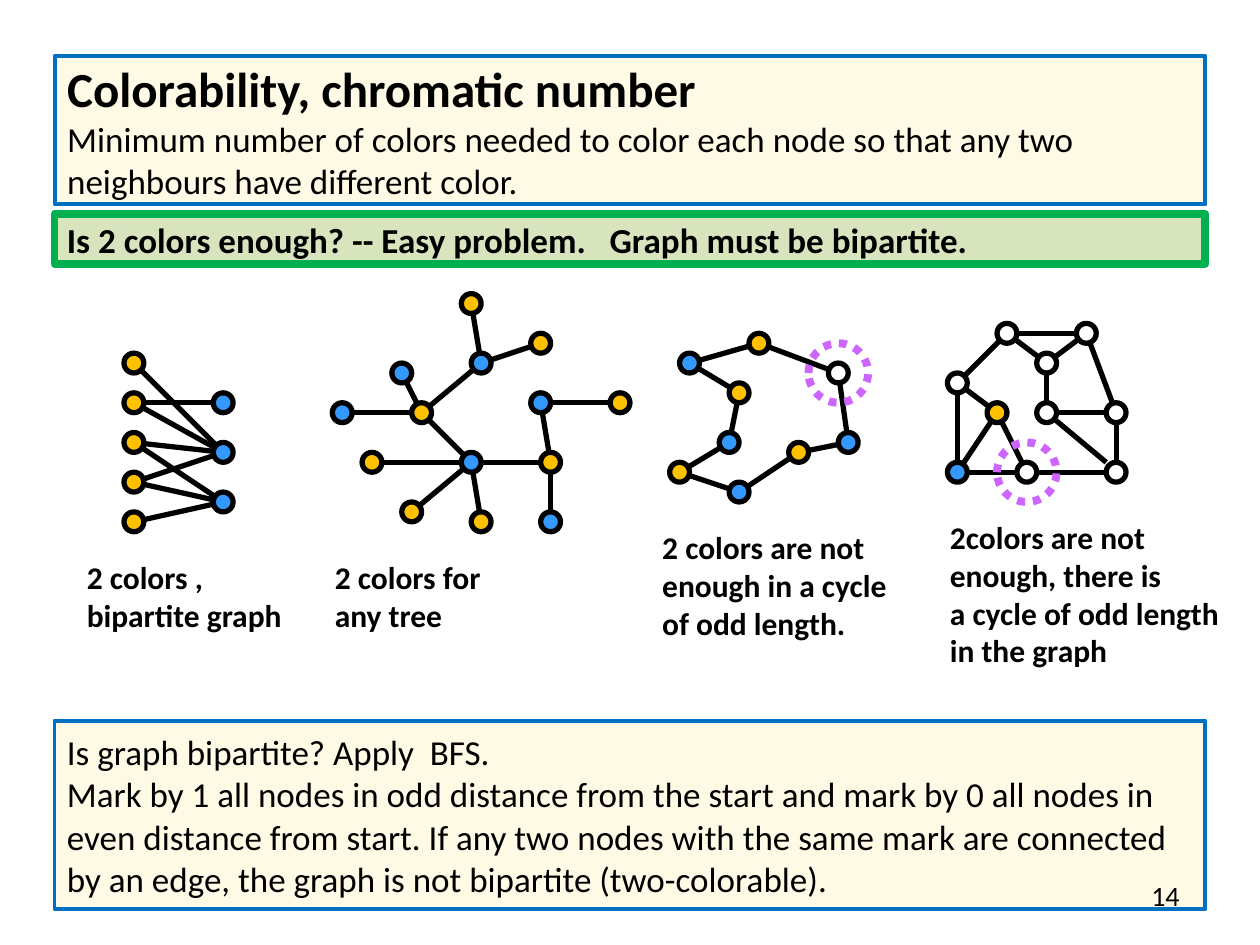
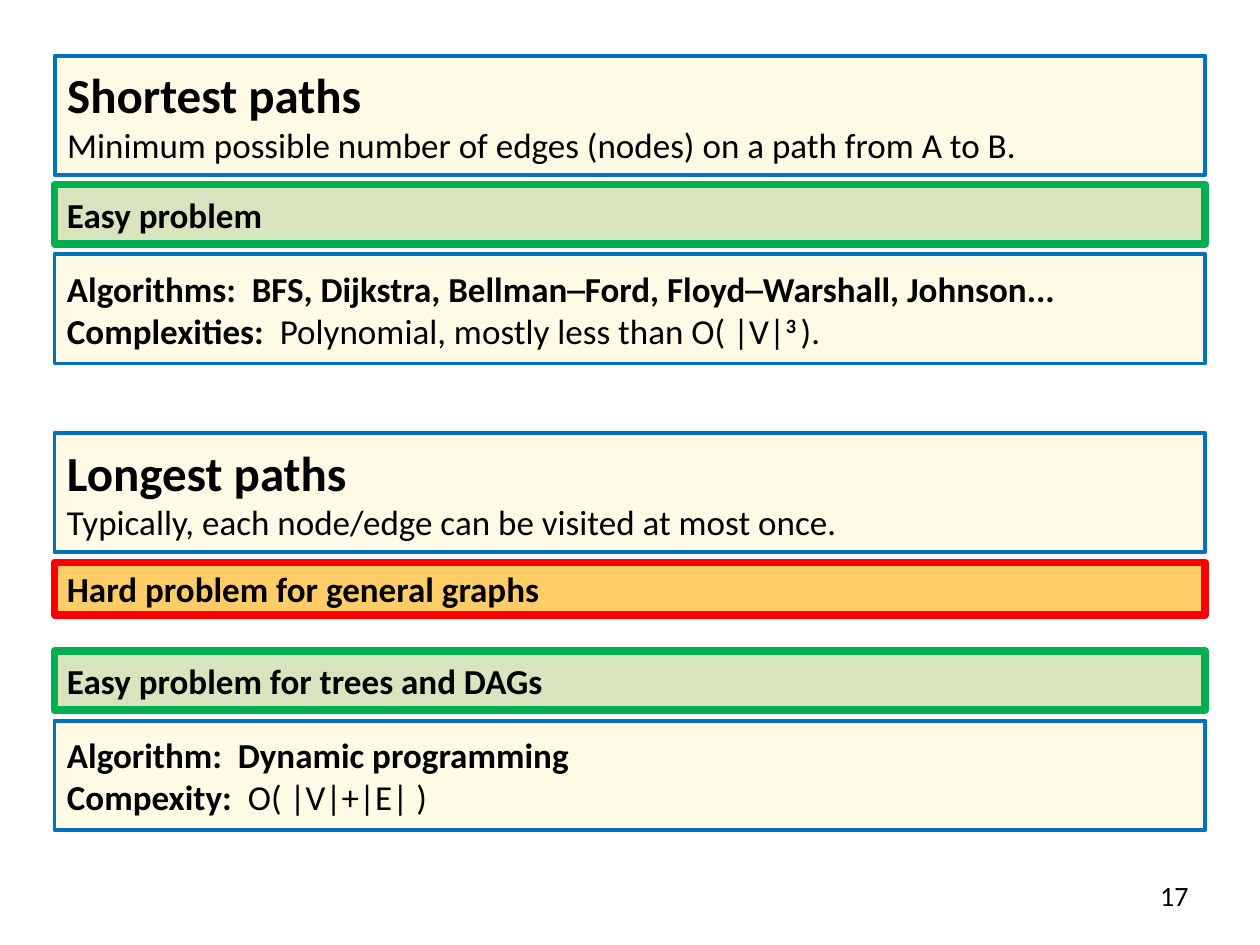
from dataclasses import dataclass

from lxml.etree import SubElement
from pptx import Presentation
from pptx.dml.color import RGBColor
from pptx.enum.dml import MSO_LINE_DASH_STYLE as Dash
from pptx.enum.shapes import MSO_CONNECTOR as Connector, MSO_SHAPE as Preset
from pptx.enum.text import MSO_ANCHOR as Anchor, MSO_AUTO_SIZE as AutoSize, PP_ALIGN as Align
from pptx.oxml.ns import qn
from pptx.shapes.autoshape import Shape
from pptx.slide import Slide
from pptx.util import Cm, Pt

FONT = "Calibri"
BLACK, WHITE, YELLOW, BLUE, VIOLET = "000000", "FFFFFF", "FFC000", "3399FF", "CC66FF"
PANEL_LEFT, PANEL_WIDTH = 1.1, 23.2
GRID, ORIGIN_X, ORIGIN_Y = 0.2, 0.1, 0.12
NODE_SIZE, RING_SIZE = 0.4, 1.2
TITLE_ONLY = 5


@dataclass(frozen=True)
class Run:
    text: str
    size: int = 20
    bold: bool = False
    baseline: int = 0


@dataclass(frozen=True)
class PanelStyle:
    fill: str
    line: str
    width: float


@dataclass(frozen=True)
class Panel:
    style: PanelStyle
    top: float
    height: float
    paragraphs: list[list[Run]]
    is_title: bool = False


@dataclass(frozen=True)
class Node:
    column: int
    row: int
    colour: str = ""

    @property
    def center(self) -> tuple[float, float]:
        return ORIGIN_X + self.column * GRID, ORIGIN_Y + self.row * GRID


@dataclass(frozen=True)
class Graph:
    nodes: dict[str, Node]
    edges: str
    caption: list[str]
    caption_box: tuple[float, float, float, float]
    ringed: str = ""


INFO = PanelStyle("FFFAE5", "0070C0", 2.25)
EASY = PanelStyle("D7E4BD", "00B050", 4.5)
HARD = PanelStyle("FFCC66", "FF0000", 4.5)


def bold(text: str, size: int = 20) -> Run:
    return Run(text, size, True)


def heading(title: str, text: str) -> list[list[Run]]:
    return [[bold(title, 28)], [Run(text)]]


COLORABILITY_PANELS = [
    Panel(INFO, 1.12, 3, heading(
        "Colorability, chromatic number",
        "Minimum number of colors needed to color each node so that any two "
        "neighbours have different color."), True),
    Panel(EASY, 4.32, 1, [[bold("Is 2 colors enough? -- Easy problem.   Graph must be bipartite.")]]),
    Panel(INFO, 14.53, 3.8, [
        [Run("Is graph bipartite? Apply  BFS.")],
        [Run("Mark by 1 all nodes in odd distance from the start and mark by 0 all nodes in "
             "even distance from start. If any two nodes with the same mark are connected "
             "by an edge, the graph is not bipartite (two-colorable).")]]),
]

PATH_PANELS = [
    Panel(INFO, 1.12, 2.4, heading(
        "Shortest paths", "Minimum possible number of edges (nodes) on a path from A to B."), True),
    Panel(EASY, 3.72, 1.2, [[bold("Easy problem")]]),
    Panel(INFO, 5.13, 2.2, [
        [bold("Algorithms:  BFS, Dijkstra, Bellman─Ford, Floyd─Warshall, Johnson...")],
        [bold("Complexities:  "), Run("Polynomial, mostly less than O( |V|"),
         Run("3 ", bold=True, baseline=30000), Run(").")]]),
    Panel(INFO, 8.73, 2.4, heading(
        "Longest paths", "Typically, each node/edge can be visited at most once.")),
    Panel(HARD, 11.34, 1.06, [[bold("Hard problem for general graphs")]]),
    Panel(EASY, 13.12, 1.2, [[bold("Easy problem for trees and DAGs")]]),
    Panel(INFO, 14.53, 2.2, [
        [bold("Algorithm:  Dynamic programming")],
        [bold("Compexity:  "), Run("O( |V|+|E| )")]]),
]

BIPARTITE = Graph(
    {name: Node(13, 36 + 4 * index, YELLOW) for index, name in enumerate("abcde")}
    | {name: Node(22, 40 + 5 * index, BLUE) for index, name in enumerate("xyz")},
    "ay bx by cy cz dy dz ez",
    ["2 colors ,", "bipartite graph"], (1.5, 11.12, 4.48, 1.8))

TREE = Graph(
    {"a": Node(47, 30, YELLOW), "b": Node(48, 36, BLUE), "c": Node(54, 34, YELLOW),
     "d": Node(40, 37, BLUE), "e": Node(42, 41, YELLOW), "f": Node(34, 41, BLUE),
     "g": Node(37, 46, YELLOW), "h": Node(47, 46, BLUE), "i": Node(41, 51, YELLOW),
     "j": Node(48, 52, YELLOW), "k": Node(55, 46, YELLOW), "l": Node(54, 40, BLUE),
     "m": Node(55, 52, BLUE), "n": Node(62, 40, YELLOW)},
    "ab bc be de ef eh gh hi hj hk kl km ln",
    ["2 colors for", "any tree"], (6.5, 11.12, 3.59, 1.8))

ODD_CYCLE = Graph(
    {"a": Node(69, 36, BLUE), "b": Node(76, 34, YELLOW), "c": Node(84, 37, WHITE),
     "d": Node(85, 44, BLUE), "e": Node(80, 45, YELLOW), "f": Node(74, 49, BLUE),
     "g": Node(68, 47, YELLOW), "h": Node(73, 44, BLUE), "i": Node(74, 39, YELLOW)},
    "ab bc cd de ef fg gh hi ia",
    ["2 colors are not", "enough in a cycle", "of odd length."], (13.1, 10.52, 5.08, 2.56), "c")

ODD_SUBGRAPH = Graph(
    {"a": Node(101, 33, WHITE), "b": Node(109, 33, WHITE), "c": Node(105, 36, WHITE),
     "d": Node(96, 38, WHITE), "e": Node(100, 41, YELLOW), "f": Node(105, 41, WHITE),
     "g": Node(112, 41, WHITE), "h": Node(96, 47, BLUE), "i": Node(103, 47, WHITE),
     "j": Node(112, 47, WHITE), "t": Node(111, 46)},
    "ab ac bc ad bg cf fg ft gj de dh eh ei hi ij",
    ["2colors are not", "enough, there is", "a cycle of odd length", "in the graph"],
    (18.9, 10.32, 5.97, 3.32), "i")


def rgb(colour: str) -> RGBColor:
    return RGBColor.from_string(colour)


def set_attributes(target: object, values: dict) -> None:
    for name, value in values.items():
        setattr(target, name, value)


def outline(shape, colour: str, width: float) -> None:
    shape.line.color.rgb = rgb(colour)
    shape.line.width = Pt(width)


def write(shape: Shape, paragraphs: list[list[Run]], align=Align.LEFT,
          anchor=Anchor.MIDDLE, wrap: bool = True) -> None:
    frame = shape.text_frame
    set_attributes(frame, {"word_wrap": wrap, "auto_size": AutoSize.NONE, "vertical_anchor": anchor})
    for index, runs in enumerate(paragraphs):
        paragraph = frame.add_paragraph() if index else frame.paragraphs[0]
        paragraph.alignment = align
        for item in runs:
            run = paragraph.add_run()
            run.text = item.text
            set_attributes(run.font, {"name": FONT, "size": Pt(item.size), "bold": item.bold})
            run.font.color.rgb = rgb(BLACK)
            if item.baseline:
                run._r.get_or_add_rPr().set("baseline", str(item.baseline))


def draw_panel(slide: Slide, panel: Panel) -> None:
    box = [Cm(value) for value in (PANEL_LEFT, panel.top, PANEL_WIDTH, panel.height)]
    if panel.is_title:
        shape = slide.shapes.title
        set_attributes(shape, dict(zip(("left", "top", "width", "height"), box)))
    else:
        shape = slide.shapes.add_shape(Preset.RECTANGLE, *box)
        shape.shadow.inherit = False
    shape.fill.solid()
    shape.fill.fore_color.rgb = rgb(panel.style.fill)
    outline(shape, panel.style.line, panel.style.width)
    write(shape, panel.paragraphs)


def draw_edge(slide: Slide, start: Node, end: Node) -> None:
    points = [Cm(value) for value in (*start.center, *end.center)]
    edge = slide.shapes.add_connector(Connector.STRAIGHT, *points)
    outline(edge, BLACK, 3)
    SubElement(edge._element.spPr, qn("a:effectLst"))


def draw_circle(slide: Slide, node: Node, size: float, line: str, width: float) -> Shape:
    x, y = node.center
    circle = slide.shapes.add_shape(
        Preset.OVAL, Cm(x - size / 2), Cm(y - size / 2), Cm(size), Cm(size))
    circle.shadow.inherit = False
    outline(circle, line, width)
    return circle


def draw_graph(slide: Slide, graph: Graph) -> None:
    for start, end in graph.edges.split():
        draw_edge(slide, graph.nodes[start], graph.nodes[end])
    for node in graph.nodes.values():
        if node.colour:
            circle = draw_circle(slide, node, NODE_SIZE, BLACK, 3)
            circle.fill.solid()
            circle.fill.fore_color.rgb = rgb(node.colour)
    if graph.ringed:
        ring = draw_circle(slide, graph.nodes[graph.ringed], RING_SIZE, VIOLET, 4.5)
        ring.fill.background()
        ring.line.dash_style = Dash.ROUND_DOT
    caption = slide.shapes.add_textbox(*[Cm(value) for value in graph.caption_box])
    write(caption, [[bold(line, 18)] for line in graph.caption], anchor=Anchor.TOP, wrap=False)


def add_slide(presentation, panels: list[Panel], graphs: list[Graph],
              number: str, number_left: float) -> None:
    slide = presentation.slides.add_slide(presentation.slide_layouts[TITLE_ONLY])
    for panel in panels:
        draw_panel(slide, panel)
    for graph in graphs:
        draw_graph(slide, graph)
    number_box = slide.shapes.add_textbox(Cm(number_left), Cm(17.53), Cm(5.92), Cm(1.02))
    write(number_box, [[Run(number, 16)]], align=Align.RIGHT)


def main() -> None:
    presentation = Presentation()
    set_attributes(presentation, {"slide_width": Cm(25.4), "slide_height": Cm(19.05)})
    graphs = [BIPARTITE, TREE, ODD_CYCLE, ODD_SUBGRAPH]
    add_slide(presentation, COLORABILITY_PANELS, graphs, "14", 18.11)
    add_slide(presentation, PATH_PANELS, [], "17", 18.29)
    presentation.save("out.pptx")


if __name__ == "__main__":
    main()
